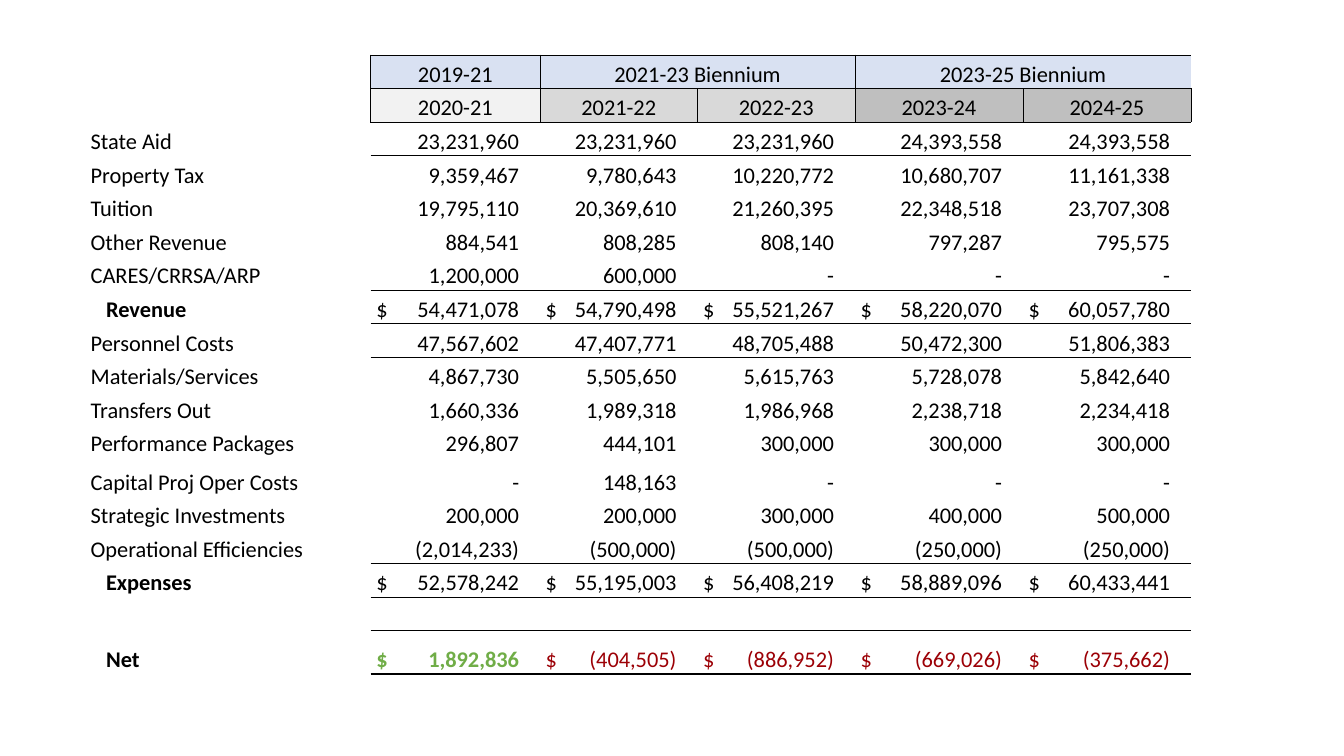
from dataclasses import dataclass

from lxml.etree import SubElement
from pptx import Presentation
from pptx.dml.color import RGBColor as RGB
from pptx.enum.text import MSO_ANCHOR as ANCHOR, PP_ALIGN as ALIGN
from pptx.oxml.ns import qn
from pptx.util import Pt

PERIODS = [("2019-21", 1, 1), ("2021-23 Biennium", 2, 3), ("2023-25 Biennium", 4, 5)]
YEARS = ["2020-21", "2021-22", "2022-23", "2023-24", "2024-25"]
BUDGET = [
    ("State Aid", "23,231,960", "23,231,960", "23,231,960", "24,393,558", "24,393,558"),
    ("Property Tax", "9,359,467", "9,780,643", "10,220,772", "10,680,707", "11,161,338"),
    ("Tuition", "19,795,110", "20,369,610", "21,260,395", "22,348,518", "23,707,308"),
    ("Other Revenue", "884,541", "808,285", "808,140", "797,287", "795,575"),
    ("CARES/CRRSA/ARP", "1,200,000", "600,000", "-", "-", "-"),
    ("Revenue", "54,471,078", "54,790,498", "55,521,267", "58,220,070", "60,057,780"),
    ("Personnel Costs", "47,567,602", "47,407,771", "48,705,488", "50,472,300", "51,806,383"),
    ("Materials/Services", "4,867,730", "5,505,650", "5,615,763", "5,728,078", "5,842,640"),
    ("Transfers Out", "1,660,336", "1,989,318", "1,986,968", "2,238,718", "2,234,418"),
    ("Performance Packages", "296,807", "444,101", "300,000", "300,000", "300,000"),
    ("Capital Proj Oper Costs", "-", "148,163", "-", "-", "-"),
    ("Strategic Investments", "200,000", "200,000", "300,000", "400,000", "500,000"),
    ("Operational Efficiencies", "(2,014,233)", "(500,000)", "(500,000)", "(250,000)", "(250,000)"),
    ("Expenses", "52,578,242", "55,195,003", "56,408,219", "58,889,096", "60,433,441"),
    (),
    ("Net", "1,892,836", "(404,505)", "(886,952)", "(669,026)", "(375,662)"),
]
TOTALS = {"Revenue", "Expenses", "Net"}


@dataclass(frozen=True)
class Theme:
    font: str = "Calibri"
    size: int = 16
    text: str = "000000"
    surplus: str = "70AD47"
    deficit: str = "9C0006"
    period: str = "D9E1F2"
    years: tuple = ("F2F2F2", "D9D9D9", "D9D9D9", "BFBFBF", "BFBFBF")
    line: float = 0.5
    heavy_line: float = 2


THEME = Theme()
LEFT, TOP = 64.8, 39.2
COL_WIDTHS = [200, 121, 112.5, 112.5, 120, 120]
HEADER_ROWS = 2
ROW_HEIGHTS = [24] * (HEADER_ROWS + len(BUDGET))
ROW_HEIGHTS[12], ROW_HEIGHTS[-1] = 27.4, 31
RULES_ABOVE = {0, 1, 2, 7, 8, 15, 16, 17}
GROUP_EDGES = {1, 2, 4, 6}
TOTAL_INDENT, DOLLAR_INDENT, AMOUNT_INSET = 11, 4, 15
NO_GRID_STYLE = "{2D5ABB26-0587-4C30-8999-92F81FD0307C}"


def add_border(cell, side, width):
    ln = SubElement(cell._tc.get_or_add_tcPr(), qn(f"a:ln{side}"), w=str(Pt(width)))
    fill = SubElement(ln, qn("a:solidFill"))
    SubElement(fill, qn("a:srgbClr"), val=THEME.text)


def draw_borders(cell, row, col):
    """Box the header groups and rule the amounts above and below totals."""
    header = row < HEADER_ROWS
    last = row == len(ROW_HEIGHTS) - 1
    sides = [
        ("L", header and col in GROUP_EDGES),
        ("R", header and col + 1 in GROUP_EDGES),
        ("T", col > 0 and row in RULES_ABOVE),
        ("B", col > 0 and (last or row + 1 in RULES_ABOVE)),
    ]
    for side, shown in sides:
        if shown:
            add_border(cell, side, THEME.heavy_line if last and side == "B" else THEME.line)


def write(cell, text, align=ALIGN.LEFT, color=THEME.text, bold=False):
    p = cell.text_frame.paragraphs[0]
    p.alignment = align
    r = p.add_run()
    r.text = text
    r.font.name, r.font.size, r.font.bold = THEME.font, Pt(THEME.size), bold
    r.font.color.rgb = RGB.from_string(color)
    return p


def write_header(cell, text, fill):
    cell.fill.solid()
    cell.fill.fore_color.rgb = RGB.from_string(fill)
    write(cell, text, ALIGN.CENTER)


def write_total(cell, amount, width, color, bold):
    """Put the dollar sign at the left and the amount at a right tab stop."""
    cell.margin_left = Pt(DOLLAR_INDENT)
    p = write(cell, "$\t" + amount, color=color, bold=bold)
    tabs = SubElement(p._p.get_or_add_pPr(), qn("a:tabLst"))
    stop = Pt(width - DOLLAR_INDENT - AMOUNT_INSET)
    SubElement(tabs, qn("a:tab"), pos=str(stop), algn="r")


def write_line(table, row, label, amounts):
    total = label in TOTALS
    name = table.cell(row, 0)
    name.margin_left = Pt(TOTAL_INDENT if total else 0)
    write(name, label, bold=total)
    for col, amount in enumerate(amounts, 1):
        cell = table.cell(row, col)
        if total:
            color, bold = THEME.text, False
            if label == "Net":
                bold = not amount.startswith("(")
                color = THEME.surplus if bold else THEME.deficit
            write_total(cell, amount, COL_WIDTHS[col], color, bold)
        else:
            cell.margin_right = Pt(AMOUNT_INSET)
            write(cell, amount, ALIGN.RIGHT)


def add_budget_table(s):
    frame = s.shapes.add_table(len(ROW_HEIGHTS), len(COL_WIDTHS), Pt(LEFT), Pt(TOP),
                               Pt(sum(COL_WIDTHS)), Pt(sum(ROW_HEIGHTS)))
    table = frame.table
    table.first_row = table.horz_banding = False
    next(frame.element.iter(qn("a:tableStyleId"))).text = NO_GRID_STYLE
    for column, width in zip(table.columns, COL_WIDTHS):
        column.width = Pt(width)
    for row, height in enumerate(ROW_HEIGHTS):
        table.rows[row].height = Pt(height)
        for col in range(len(COL_WIDTHS)):
            cell = table.cell(row, col)
            cell.margin_left = cell.margin_right = cell.margin_top = cell.margin_bottom = 0
            cell.vertical_anchor = ANCHOR.BOTTOM
            draw_borders(cell, row, col)
            cell.fill.background()

    for period, first, last in PERIODS:
        if last > first:
            table.cell(0, first).merge(table.cell(0, last))
        write_header(table.cell(0, first), period, THEME.period)
    for col, (year, fill) in enumerate(zip(YEARS, THEME.years), 1):
        write_header(table.cell(1, col), year, fill)
    for row, line in enumerate(BUDGET, HEADER_ROWS):
        if line:
            write_line(table, row, line[0], line[1:])


def main():
    prs = Presentation()
    prs.slide_width, prs.slide_height = Pt(960), Pt(540)
    s = prs.slides.add_slide(prs.slide_layouts[6])
    add_budget_table(s)
    prs.save("out.pptx")


if __name__ == "__main__":
    main()
